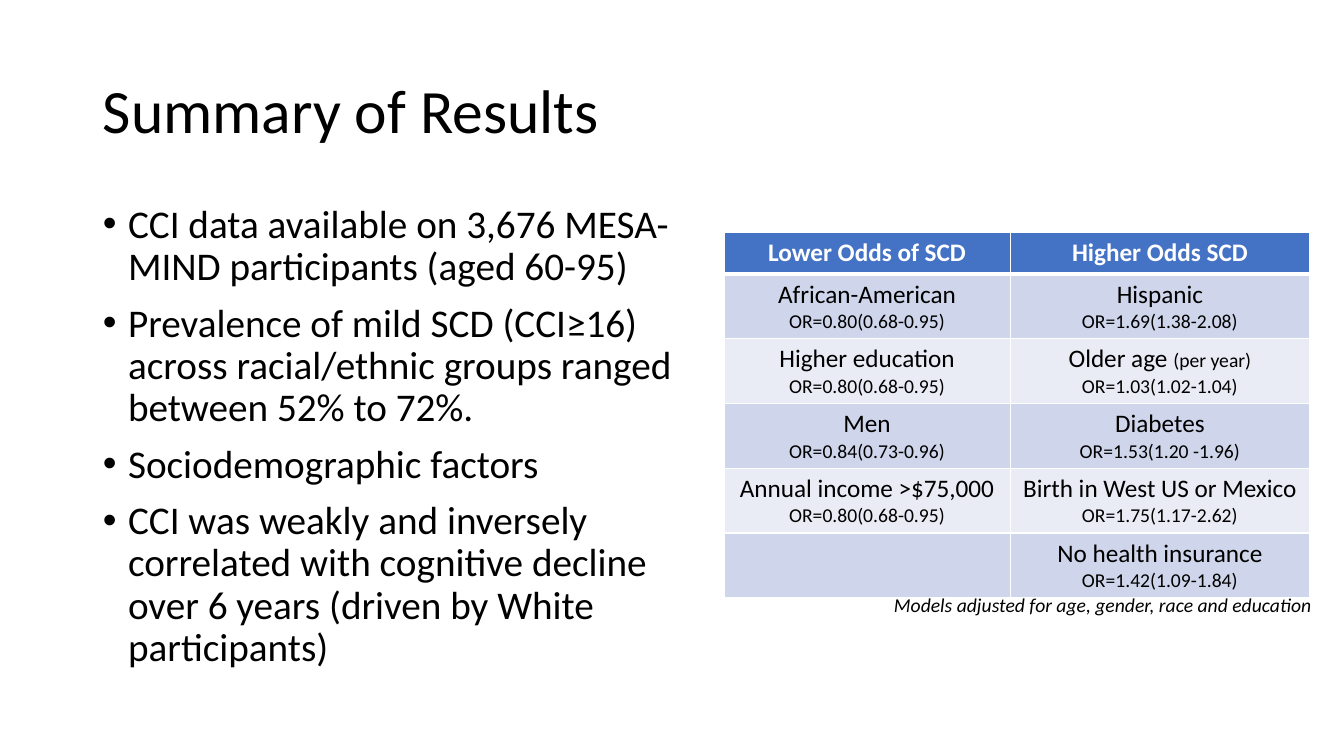
from lxml import etree
from pptx import Presentation
from pptx import util as u
from pptx.dml.color import RGBColor
from pptx.enum import text
from pptx.oxml.ns import qn

COLORS = {
    "text": "000000",
    "white": "FFFFFF",
    "header": "4472C4",
    "band_dark": "CFD5EA",
    "band_light": "E9EBF5",
}
ALIGN = text.PP_ALIGN

BULLETS = [
    "CCI data available on 3,676 MESA-MIND participants (aged 60-95)",
    "Prevalence of mild SCD (CCI≥16) across racial/ethnic groups ranged between 52% to 72%.",
    "Sociodemographic factors",
    "CCI was weakly and inversely correlated with cognitive decline over 6 years "
    "(driven by White participants)",
]
HEADERS = ["Lower Odds of SCD", "Higher Odds SCD"]
# Each cell holds a factor, its odds ratio and an optional small note
ODDS = [
    [("African-American", "OR=0.80(0.68-0.95)"), ("Hispanic", "OR=1.69(1.38-2.08)")],
    [("Higher education", "OR=0.80(0.68-0.95)"),
     ("Older age ", "OR=1.03(1.02-1.04)", "(per year)")],
    [("Men", "OR=0.84(0.73-0.96)"), ("Diabetes", "OR=1.53(1.20 -1.96)")],
    [("Annual income >$75,000", "OR=0.80(0.68-0.95)"),
     ("Birth in West US or Mexico", "OR=1.75(1.17-2.62)")],
    [None, ("No health insurance", "OR=1.42(1.09-1.84)")],
]


def px(n):
    """Turn whole px, 100 to the inch, into EMU."""
    return u.Emu(n * 9144)


def add_text(p, words, size=18, color="text", bold=False, italic=False, align=None):
    """Append one formatted run to paragraph p."""
    r = p.add_run()
    r.text = words
    r.font.name = "Calibri"
    r.font.size = u.Pt(size)
    r.font.bold = bold
    r.font.italic = italic
    r.font.color.rgb = RGBColor.from_string(COLORS[color])
    if align is not None:
        p.alignment = align


def paragraph(tf, i):
    return tf.paragraphs[0] if i == 0 else tf.add_paragraph()


def set_borders(cell, bottom):
    """Draw white cell borders, 1 pt except for the bottom one."""
    tcPr = cell._tc.get_or_add_tcPr()
    widths = {"a:lnL": 1, "a:lnR": 1, "a:lnT": 1, "a:lnB": bottom}
    for i, (tag, width) in enumerate(widths.items()):
        ln = etree.Element(qn(tag), w=str(u.Pt(width)))
        fill = etree.SubElement(ln, qn("a:solidFill"))
        etree.SubElement(fill, qn("a:srgbClr"), val=COLORS["white"])
        tcPr.insert(i, ln)


class Deck:
    """Holds the presentation and the current slide."""

    def __init__(self, width, height):
        self.prs = Presentation()
        self.prs.slide_width, self.prs.slide_height = px(width), px(height)
        self.s = self.prs.slides.add_slide(self.prs.slide_layouts[1])

    def place(self, sp, box, anchor):
        sp.left, sp.top, sp.width, sp.height = map(px, box)
        tf = sp.text_frame
        tf.word_wrap = True
        tf.auto_size = text.MSO_AUTO_SIZE.NONE
        tf.vertical_anchor = anchor
        return tf

    def title(self, words, box):
        tf = self.place(self.s.shapes.title, box, text.MSO_ANCHOR.MIDDLE)
        p = tf.paragraphs[0]
        p.line_spacing = 0.9
        add_text(p, words, size=44, align=ALIGN.LEFT)

    def bullets(self, items, box):
        tf = self.place(self.s.placeholders[1], box, text.MSO_ANCHOR.TOP)
        for i, item in enumerate(items):
            p = paragraph(tf, i)
            p.line_spacing = 0.9
            p.space_before = u.Pt(10)
            add_text(p, item, size=28, align=ALIGN.LEFT)
            pPr = p._p.get_or_add_pPr()
            pPr.set("marL", str(px(25)))
            pPr.set("indent", str(px(-25)))
            etree.SubElement(pPr, qn("a:buFont"), typeface="Arial")
            etree.SubElement(pPr, qn("a:buChar"), char="•")

    def table(self, headers, rows, left, top, col_widths, header_height, row_height):
        heights = [header_height] + [row_height] * len(rows)
        frame = self.s.shapes.add_table(
            len(heights), len(col_widths), px(left), px(top),
            px(sum(col_widths)), px(sum(heights)))
        tbl = frame.table
        for col, width in zip(tbl.columns, col_widths):
            col.width = px(width)
        for row, height in zip(tbl.rows, heights):
            row.height = px(height)
        for c, words in enumerate(headers):
            cell = self.cell(tbl, 0, c, "header", bottom=3)
            add_text(cell.text_frame.paragraphs[0], words, color="white",
                     bold=True, align=ALIGN.CENTER)
        for r, row in enumerate(rows, 1):
            for c, entry in enumerate(row):
                cell = self.cell(tbl, r, c, "band_dark" if r % 2 else "band_light")
                if entry:
                    self.odds(cell.text_frame, *entry)

    def cell(self, tbl, r, c, fill, bottom=1):
        cell = tbl.cell(r, c)
        cell.fill.solid()
        cell.fill.fore_color.rgb = RGBColor.from_string(COLORS[fill])
        set_borders(cell, bottom)
        return cell

    def odds(self, tf, factor, ratio, note=None):
        p = tf.paragraphs[0]
        add_text(p, factor, align=ALIGN.CENTER)
        if note:
            add_text(p, note, size=14)
        add_text(tf.add_paragraph(), ratio, size=14, align=ALIGN.CENTER)

    def note(self, words, box):
        sp = self.s.shapes.add_textbox(*map(px, box))
        tf = self.place(sp, box, text.MSO_ANCHOR.TOP)
        add_text(tf.paragraphs[0], words, size=14, italic=True, align=ALIGN.RIGHT)


def main():
    deck = Deck(1333, 750)
    deck.title("Summary of Results", (92, 40, 1150, 145))
    deck.bullets(BULLETS, (92, 198, 626, 476))
    deck.table(HEADERS, ODDS, left=718, top=231, col_widths=[284, 297],
               header_height=41, row_height=64)
    deck.note("Models adjusted for age, gender, race and education", (718, 583, 593, 34))
    deck.prs.save("out.pptx")


if __name__ == "__main__":
    main()
